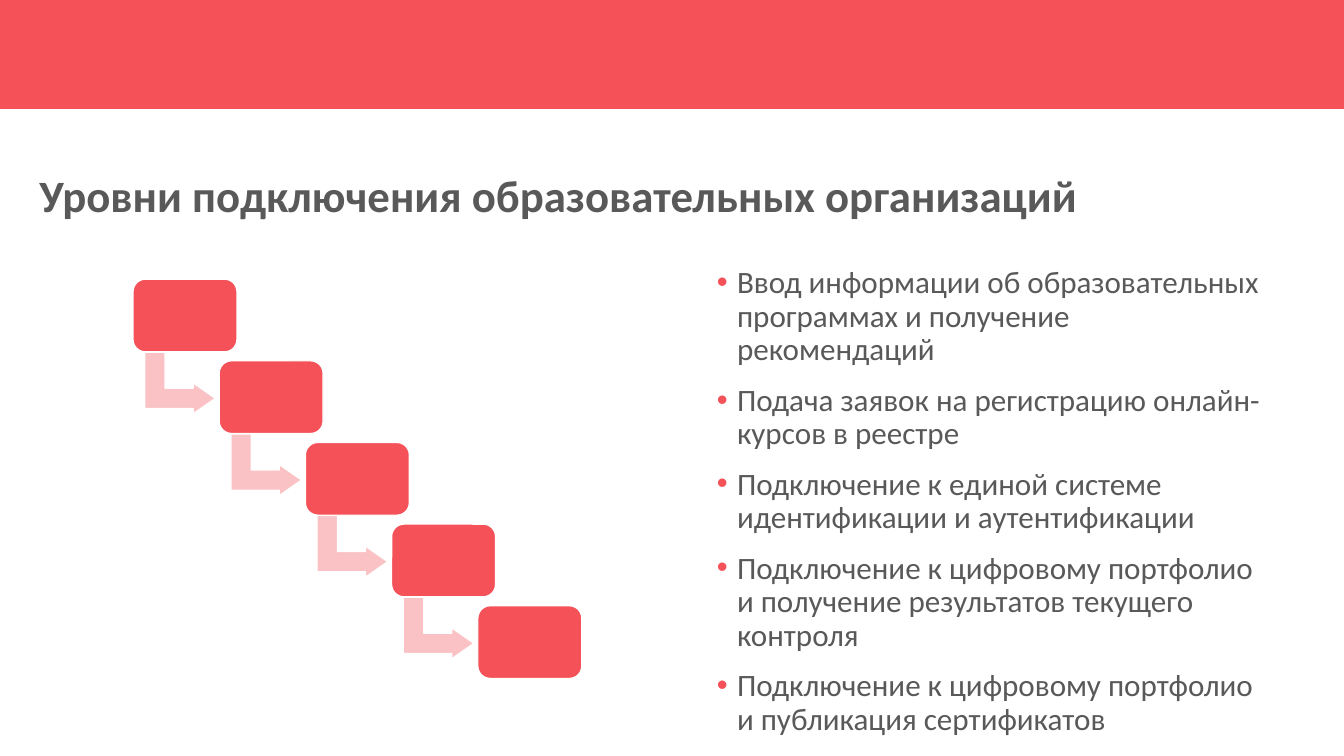
from dataclasses import dataclass

from lxml import etree
from pptx import Presentation
from pptx.dml.color import RGBColor
from pptx.enum.shapes import MSO_SHAPE
from pptx.enum.text import MSO_ANCHOR, MSO_AUTO_SIZE, PP_ALIGN
from pptx.oxml.ns import qn
from pptx.util import Inches, Pt

RECTANGLE = MSO_SHAPE.RECTANGLE
STEP_BOX = MSO_SHAPE.ROUNDED_RECTANGLE
STEP_ARROW = MSO_SHAPE.BENT_UP_ARROW
MIDDLE = MSO_ANCHOR.MIDDLE
NO_AUTOFIT = MSO_AUTO_SIZE.NONE
LEFT = PP_ALIGN.LEFT

TITLE = "Уровни подключения образовательных организаций"
LEVELS = [
    "Ввод информации об образовательных программах и получение рекомендаций",
    "Подача заявок на регистрацию онлайн-курсов в реестре",
    "Подключение к единой системе идентификации и аутентификации",
    "Подключение к цифровому портфолио и получение результатов текущего контроля",
    "Подключение к цифровому портфолио и публикация сертификатов",
]

SLIDE_SIZE = (13.33, 7.5)
BANNER_HEIGHT = 1.08
TITLE_AREA = (0.29, 1.47, 12.03, 0.99)
LIST_AREA = (7.01, 2.46, 5.67, 5.04)
FIRST_BOX = (1.32, 2.77)
BOX_SIZE = (1.03, 0.72)
FIRST_ARROW = (1.48, 3.45)
ARROW_SIZE = (0.61, 0.7)
STEP_OFFSET = (0.855, 0.81)
BULLET_INDENT = 0.2


@dataclass(frozen=True)
class Theme:
    accent: str = "F45159"
    arrow: str = "FAC2C4"
    text: str = "595959"
    outline: str = "FFFFFF"
    font: str = "Calibri"
    title_size: float = 32
    list_size: float = 22.2
    outline_width: float = 0.85


THEME = Theme()


def add_bullet(paragraph, color):
    properties = paragraph._p.get_or_add_pPr()
    properties.set("marL", str(Inches(BULLET_INDENT)))
    properties.set("indent", str(-Inches(BULLET_INDENT)))
    bullet_color = etree.SubElement(properties, qn("a:buClr"))
    etree.SubElement(bullet_color, qn("a:srgbClr"), val=color)
    etree.SubElement(properties, qn("a:buFont"), typeface="Arial")
    etree.SubElement(properties, qn("a:buChar"), char="•")


def fill_placeholder(placeholder, area, lines, *, size, bold=False, bullets=False):
    placeholder.left, placeholder.top, placeholder.width, placeholder.height = map(Inches, area)
    frame = placeholder.text_frame
    frame.word_wrap = True
    frame.auto_size = NO_AUTOFIT
    frame.vertical_anchor = MIDDLE
    for index, line in enumerate(lines):
        paragraph = frame.add_paragraph() if index else frame.paragraphs[0]
        paragraph.text = line
        if bullets:
            add_bullet(paragraph, THEME.accent)
        paragraph.alignment = LEFT
        paragraph.line_spacing = 0.9
        paragraph.space_before = Pt(12 if index else 0)
        paragraph.font.name = THEME.font
        paragraph.font.size = Pt(size)
        paragraph.font.bold = bold
        paragraph.font.color.rgb = RGBColor.from_string(THEME.text)


def add_filled_shape(slide, kind, position, size, color, *, outlined=True, adjustments=(), rotation=0):
    shape = slide.shapes.add_shape(kind, *map(Inches, (*position, *size)))
    shape.shadow.inherit = False
    shape.rotation = rotation
    shape.fill.solid()
    shape.fill.fore_color.rgb = RGBColor.from_string(color)
    if outlined:
        shape.line.color.rgb = RGBColor.from_string(THEME.outline)
        shape.line.width = Pt(THEME.outline_width)
    else:
        shape.line.fill.background()
    for index, value in enumerate(adjustments):
        shape.adjustments[index] = value


def step_position(start, index):
    return tuple(origin + index * offset for origin, offset in zip(start, STEP_OFFSET))


def add_staircase(slide):
    for index in range(len(LEVELS)):
        if index < len(LEVELS) - 1:
            add_filled_shape(slide, STEP_ARROW, step_position(FIRST_ARROW, index), ARROW_SIZE,
                             THEME.arrow, adjustments=(0.33, 0.25, 0.36), rotation=90)
        add_filled_shape(slide, STEP_BOX, step_position(FIRST_BOX, index), BOX_SIZE,
                         THEME.accent, adjustments=(0.17,))


def main():
    presentation = Presentation()
    presentation.slide_width, presentation.slide_height = map(Inches, SLIDE_SIZE)
    slide = presentation.slides.add_slide(presentation.slide_layouts[1])
    add_filled_shape(slide, RECTANGLE, (0, 0), (SLIDE_SIZE[0], BANNER_HEIGHT),
                     THEME.accent, outlined=False)
    fill_placeholder(slide.shapes.title, TITLE_AREA, [TITLE], size=THEME.title_size, bold=True)
    fill_placeholder(slide.placeholders[1], LIST_AREA, LEVELS, size=THEME.list_size, bullets=True)
    add_staircase(slide)
    presentation.save("out.pptx")


if __name__ == "__main__":
    main()
